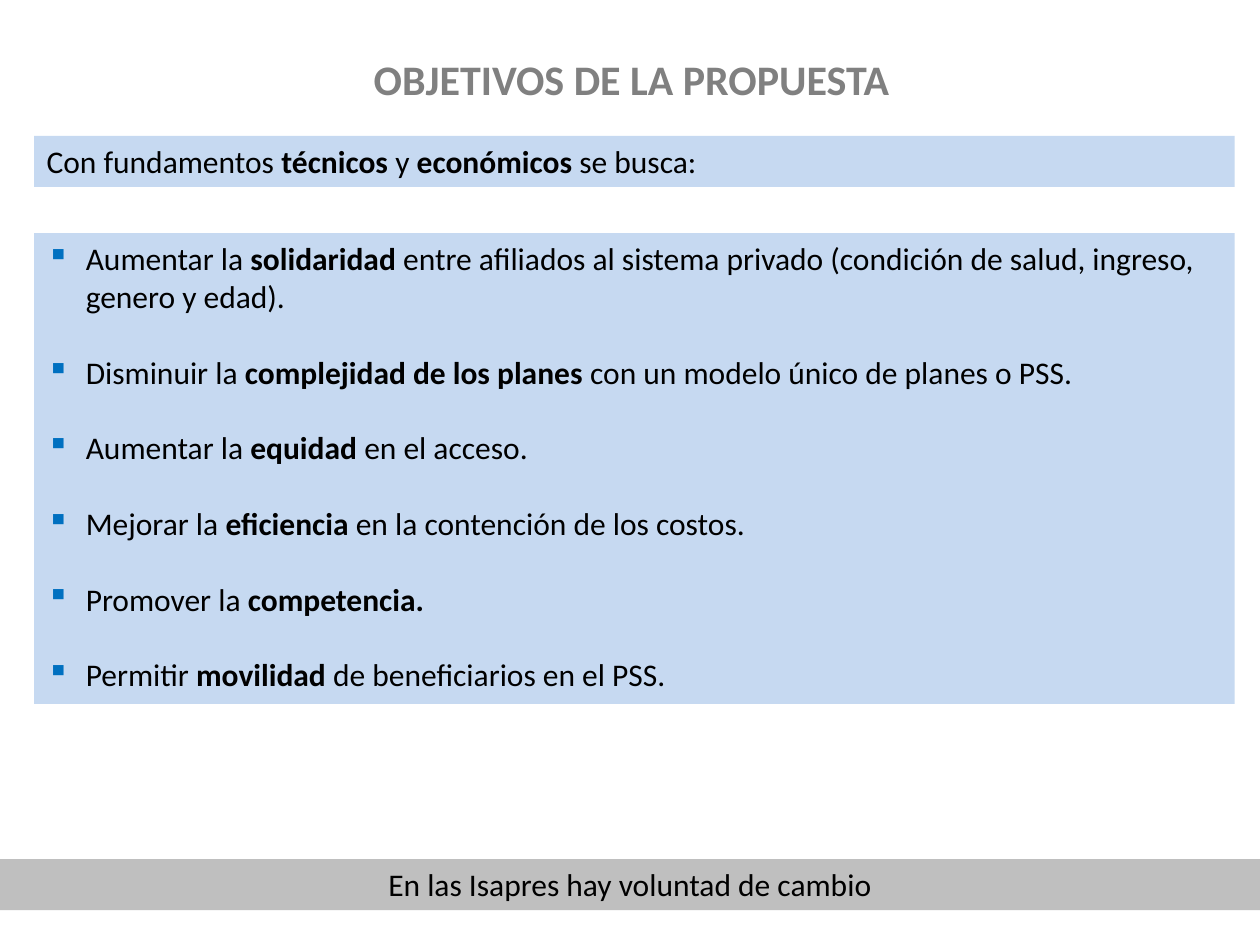
from lxml import etree
from pptx import Presentation
from pptx.dml.color import RGBColor
from pptx.enum import shapes, text
from pptx.oxml import ns
from pptx.util import Cm, Pt

FONT = "Calibri"
BLACK = RGBColor(0x00, 0x00, 0x00)
TITLE_GRAY = RGBColor(0x80, 0x80, 0x80)
PANEL_BLUE = RGBColor(0xC6, 0xD9, 0xF1)
BAND_GRAY = RGBColor(0xBF, 0xBF, 0xBF)
BULLET_BLUE = RGBColor(0x00, 0x70, 0xC0)

BODY_SIZE = Pt(18)
GOAL_GAP = Pt(21.6)
GOAL_INDENT = Cm(0.79)

# Asterisks enclose the bold words.
INTRO = "Con fundamentos *técnicos* y *económicos* se busca:"
GOALS = [
    "Aumentar la *solidaridad* entre afiliados al sistema privado "
    "(condición de salud, ingreso, genero y edad).",
    "Disminuir la *complejidad de los planes* con un modelo único de planes o PSS.",
    "Aumentar la *equidad* en el acceso.",
    "Mejorar la *eficiencia* en la contención de los costos.",
    "Promover la *competencia.*",
    "Permitir *movilidad* de beneficiarios en el PSS.",
]
CLOSING = "En las Isapres hay voluntad de cambio"


def format_font(font, color, **values):
    font.color.rgb = color
    for attribute, value in {"name": FONT, **values}.items():
        setattr(font, attribute, value)


def write_marked(paragraph, marked):
    """Write a line whose asterisks switch bold on and off."""
    for index, words in enumerate(marked.split("*")):
        if words:
            run = paragraph.add_run()
            run.text = words
            format_font(run.font, BLACK, size=BODY_SIZE, bold=index % 2 == 1)


def add_bullet(paragraph):
    properties = paragraph._p.get_or_add_pPr()
    properties.set("marL", str(GOAL_INDENT))
    properties.set("indent", str(-GOAL_INDENT))
    color = etree.SubElement(properties, ns.qn("a:buClr"))
    etree.SubElement(color, ns.qn("a:srgbClr"), val=str(BULLET_BLUE))
    etree.SubElement(properties, ns.qn("a:buChar"), char="▪")


def add_panel(slide, box, fill, lines, align=text.PP_ALIGN.LEFT):
    """Add a borderless filled rectangle and return its paragraphs."""
    panel = slide.shapes.add_shape(shapes.MSO_SHAPE.RECTANGLE, *box)
    panel.shadow.inherit = False
    panel.fill.solid()
    panel.fill.fore_color.rgb = fill
    panel.line.fill.background()
    frame = panel.text_frame
    frame.word_wrap = True
    frame.vertical_anchor = text.MSO_ANCHOR.TOP
    frame.auto_size = text.MSO_AUTO_SIZE.SHAPE_TO_FIT_TEXT
    for index, line in enumerate(lines):
        paragraph = frame.add_paragraph() if index else frame.paragraphs[0]
        paragraph.alignment = align
        write_marked(paragraph, line)
    return frame.paragraphs


def place_title(slide, box):
    title = slide.shapes.title
    title.left, title.top, title.width, title.height = box
    title.text_frame.text = "OBJETIVOS DE LA PROPUESTA"
    title.text_frame.vertical_anchor = text.MSO_ANCHOR.MIDDLE
    heading = title.text_frame.paragraphs[0]
    heading.alignment = text.PP_ALIGN.CENTER
    format_font(heading.runs[0].font, TITLE_GRAY, size=Pt(24), bold=True)


def add_goals(slide, box):
    for index, goal in enumerate(add_panel(slide, box, PANEL_BLUE, GOALS)):
        goal.space_before = GOAL_GAP if index else Pt(0)
        add_bullet(goal)


def main():
    deck = Presentation()
    deck.slide_width, deck.slide_height = Cm(25.4), Cm(19.05)
    slide = deck.slides.add_slide(deck.slide_layouts[5])

    left, width, line_height = Cm(0.69), Cm(24.2), Cm(1.03)
    place_title(slide, (Cm(1.3), 0, Cm(22.86), Cm(3.18)))
    add_goals(slide, (left, Cm(4.7), width, Cm(9.49)))
    add_panel(slide, (left, Cm(2.74), width, line_height), PANEL_BLUE, [INTRO])
    add_panel(slide, (0, Cm(17.32), deck.slide_width, line_height), BAND_GRAY,
              [CLOSING], text.PP_ALIGN.CENTER)
    deck.save("out.pptx")


if __name__ == "__main__":
    main()
